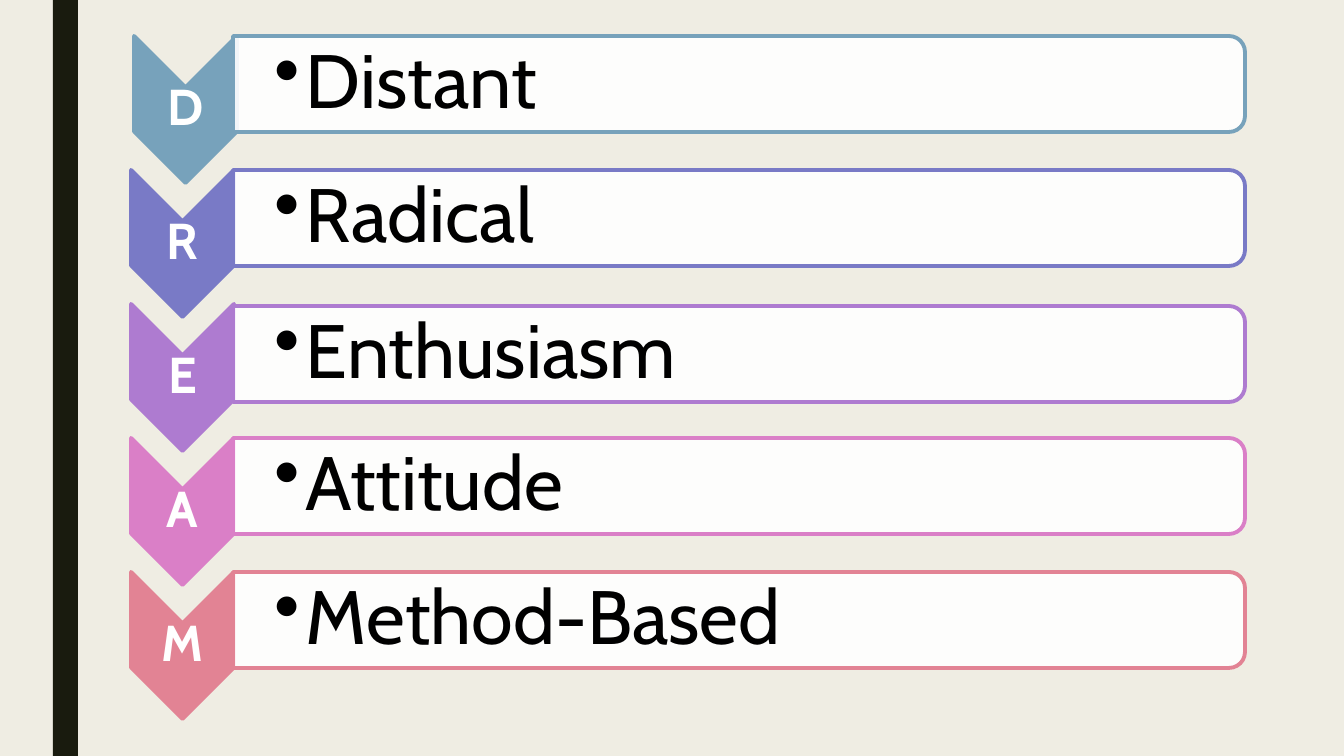
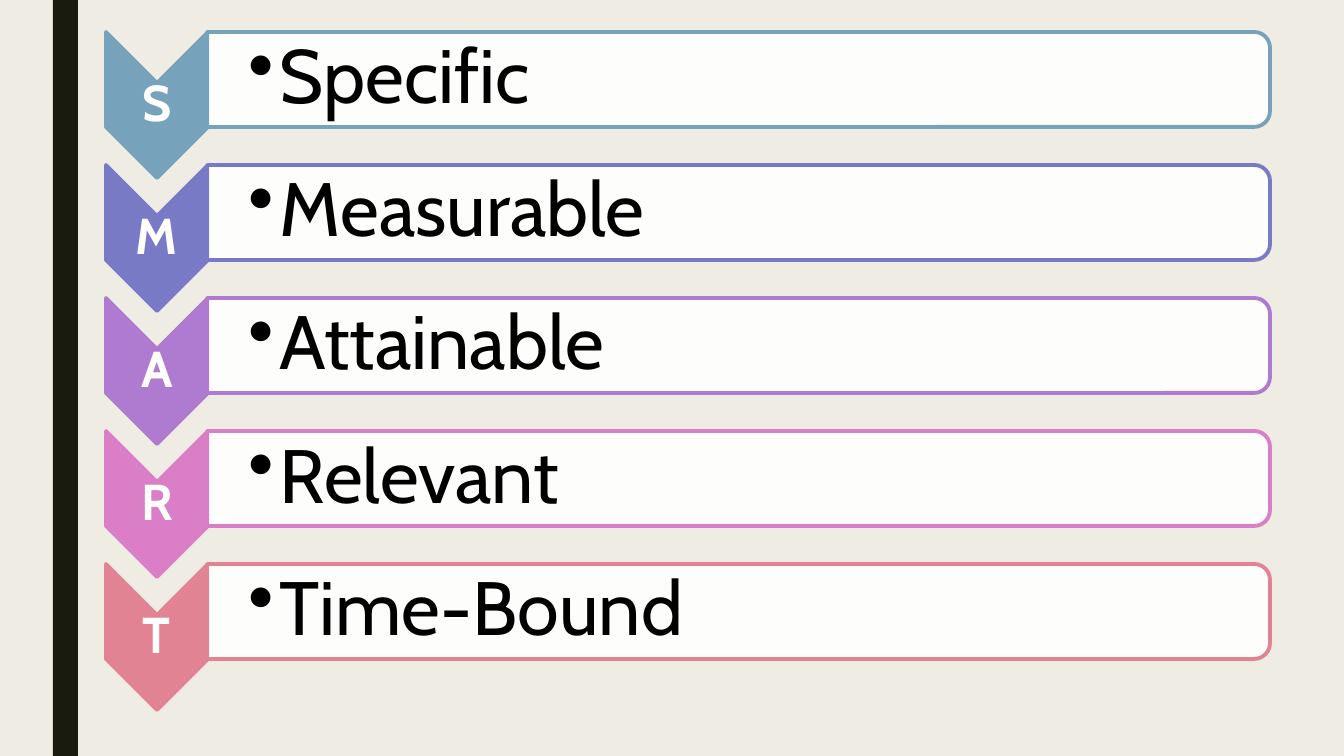
from lxml import etree
from pptx import Presentation
from pptx import util as u
from pptx.dml.color import RGBColor
from pptx.enum import shapes, text
from pptx.oxml import ns

PX = u.Inches(1) / 100.8
SLIDE_W, SLIDE_H = 1344, 756
BLANK_LAYOUT = 6
FONT = "Cabin"
COLORS = {
    "paper": "EFEDE3", "band": "191B0E", "panel": "FFFFFF",
    "letter": "FFFFFF", "word": "000000",
}
ROW_COLORS = ["77A2BB", "797AC6", "AE7BD0", "DA7FC7", "E28394"]
PANEL_OPACITY = 90
TEXT_INSET = 5
BULLET_INDENT = 31

LETTER_STYLE = {"size": u.Pt(36), "bold": True, "name": FONT}
WORD_STYLE = {"size": u.Pt(54), "bold": False, "name": FONT}

ACRONYMS = [
    {
        "words": ["Distant", "Radical", "Enthusiasm", "Attitude", "Method-Based"],
        "left": 131, "top": 36, "pitch": 134,
        "arrow": (103, 147), "panel": (1012, 96),
        "arrow_shift": {0: 3}, "panel_drop": {2: 2},
    },
    {
        "words": ["Specific", "Measurable", "Attainable", "Relevant", "Time-Bound"],
        "left": 106, "top": 32, "pitch": 133,
        "arrow": (102, 146), "panel": (1063, 95),
        "arrow_shift": {}, "panel_drop": {},
    },
]


def px(length):
    return u.Emu(round(length * PX))


def rgb(color):
    return RGBColor.from_string(color)


def set_all(target, values):
    for name, value in values.items():
        setattr(target, name, value)


class Deck:
    """Holds the presentation, its shared look and the current slide."""

    def __init__(self):
        self.prs = Presentation()
        set_all(self.prs, {"slide_width": px(SLIDE_W), "slide_height": px(SLIDE_H)})
        self.layout = self.prs.slide_layouts[BLANK_LAYOUT]
        paper = self.prs.slide_master.background.fill
        paper.solid()
        paper.fore_color.rgb = rgb(COLORS["paper"])
        self.slide = None

    def new_slide(self):
        first = self.slide is None
        self.slide = self.prs.slides.add_slide(self.layout)
        if first:
            self.add_layout_band()

    def add_layout_band(self):
        """Draw the side band once and move it to the layout all slides use."""
        band = self.shape(shapes.MSO_SHAPE.RECTANGLE, (53, 0, 25, SLIDE_H), COLORS["band"])
        self.layout.shapes.element.append(band.element)

    def shape(self, kind, box, fill, line=None):
        shape = self.slide.shapes.add_shape(kind, *map(px, box))
        shape.shadow.inherit = False
        shape.fill.solid()
        shape.fill.fore_color.rgb = rgb(fill)
        if line:
            shape.line.color.rgb = rgb(line)
            shape.line.width = u.Pt(2.75)
        else:
            shape.line.fill.background()
        return shape

    def turned_shape(self, kind, box, fill, line):
        """Add a shape turned by 90° so that it covers the box as seen."""
        left, top, width, height = box
        offset = (width - height) / 2
        unturned = (left + offset, top - offset, height, width)
        shape = self.shape(kind, unturned, fill, line)
        shape.rotation = 90
        return shape

    def arrow(self, box, color):
        self.turned_shape(shapes.MSO_SHAPE.CHEVRON, box, color, color)

    def panel(self, box, color):
        panel = self.turned_shape(
            shapes.MSO_SHAPE.ROUND_2_SAME_RECTANGLE, box, COLORS["panel"], color)
        fill_color = panel.element.spPr.find(ns.qn("a:solidFill")).find(ns.qn("a:srgbClr"))
        etree.SubElement(fill_color, ns.qn("a:alpha"), val=str(PANEL_OPACITY * 1000))

    def label(self, box, content, style, color, inset, left_inset):
        frame = self.slide.shapes.add_textbox(*map(px, box)).text_frame
        set_all(frame, {
            "word_wrap": True, "vertical_anchor": text.MSO_ANCHOR.MIDDLE,
            "margin_left": px(left_inset), "margin_right": px(inset),
            "margin_top": px(inset), "margin_bottom": px(inset),
        })
        paragraph = frame.paragraphs[0]
        paragraph.line_spacing = 0.9
        run = paragraph.add_run()
        run.text = content
        set_all(run.font, style)
        run.font.color.rgb = rgb(color)
        return paragraph

    def letter(self, box, content):
        paragraph = self.label(box, content, LETTER_STYLE, COLORS["letter"], 3, 3)
        paragraph.alignment = text.PP_ALIGN.CENTER

    def bullet_word(self, box, content):
        paragraph = self.label(box, content, WORD_STYLE, COLORS["word"], 4, 42)
        properties = paragraph._p.get_or_add_pPr()
        properties.set("marL", str(px(BULLET_INDENT)))
        properties.set("indent", str(-px(BULLET_INDENT)))
        etree.SubElement(properties, ns.qn("a:buChar"), char="•")

    def acronym(self, words, left, top, pitch, arrow, panel, arrow_shift, panel_drop):
        """Draw a row per word: its initial in an arrow, the word in a panel."""
        arrow_w, arrow_h = arrow
        panel_w, panel_h = panel
        panel_left = left + arrow_w - 1
        notch = arrow_w // 2
        for row, (word, color) in enumerate(zip(words, ROW_COLORS)):
            row_top = top + row * pitch
            arrow_left = left + arrow_shift.get(row, 0)
            panel_top = row_top + panel_drop.get(row, 0)
            self.arrow((arrow_left, row_top, arrow_w, arrow_h), color)
            self.letter((arrow_left, row_top + notch, arrow_w, arrow_h - 2 * notch), word[0])
            self.panel((panel_left, panel_top, panel_w, panel_h), color)
            self.bullet_word((panel_left, panel_top + TEXT_INSET,
                              panel_w - TEXT_INSET, panel_h - 2 * TEXT_INSET), word)


def main():
    deck = Deck()
    for acronym in ACRONYMS:
        deck.new_slide()
        deck.acronym(**acronym)
    deck.prs.save("out.pptx")


if __name__ == "__main__":
    main()
